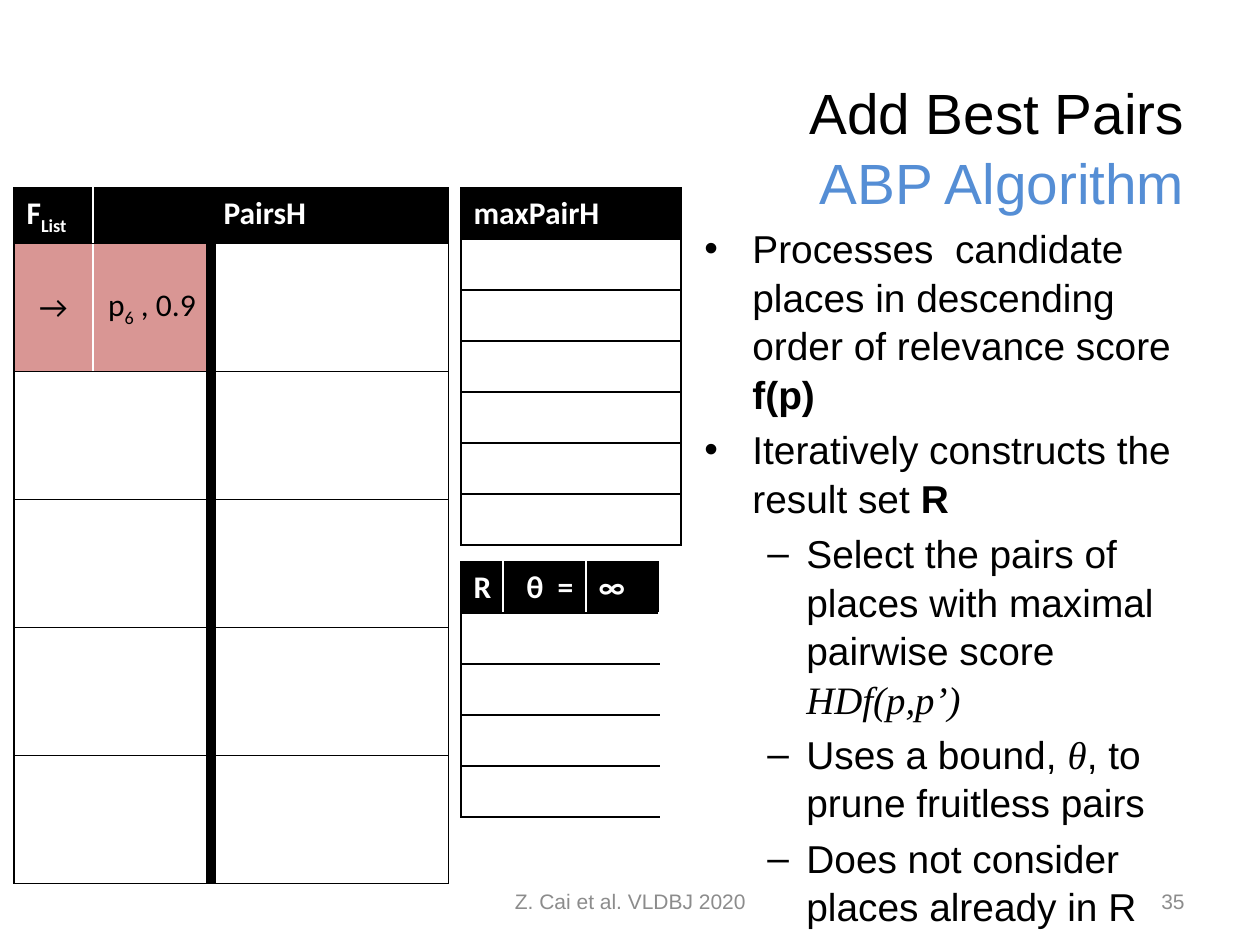
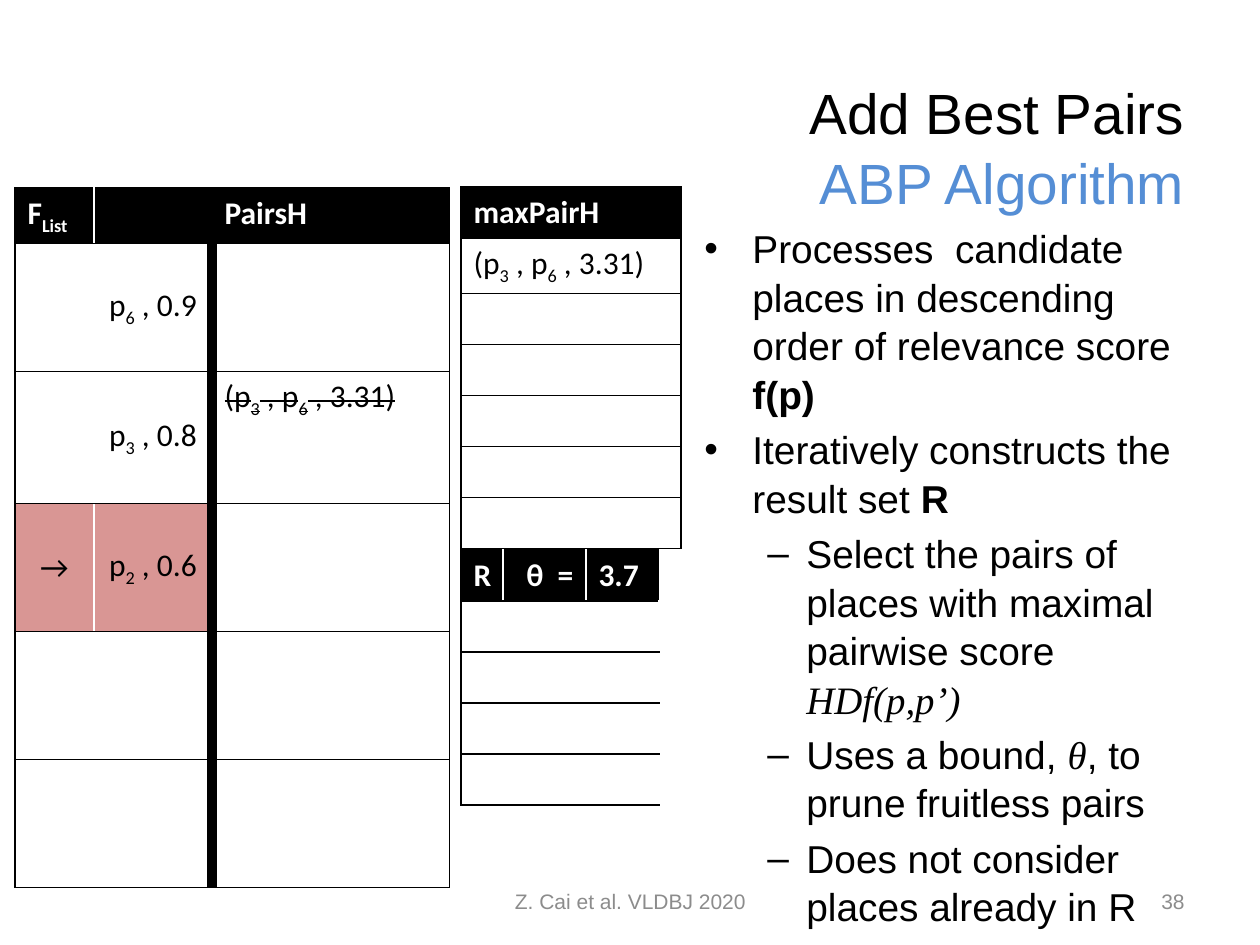
"""Build two slides that trace the Add Best Pairs algorithm through its tables."""
from lxml import etree
from pptx import Presentation
from pptx import util as u
from pptx.dml.color import RGBColor
from pptx.enum import text
from pptx.oxml.ns import qn

PX_PER_INCH = 126

THEME = {
    "ink": "000000", "paper": "FFFFFF", "accent": "558ED5",
    "muted": "8C8C8C", "current": "D99694",
    "sans": "Arial", "math": "Times New Roman", "table": "Calibri",
    "title_size": 32.4, "body_size": 22.2, "cell_size": 18, "footer_size": 12,
    "thin": 0.75, "thick": 6, "leading": 1.04, "paragraph_gap": 4,
}

TITLE_LINES = [("Add Best Pairs", "ink"), ("ABP Algorithm", "accent")]
CITATION = "Z. Cai et al. VLDBJ 2020"

BOLD = {"bold": True}
MATH = {"name": THEME["math"], "italic": True}
EXPLANATION = [
    (0, [("Processes  candidate places in descending order of relevance score ", {}),
         ("f(p)", BOLD)]),
    (0, [("Iteratively constructs the result set ", {}), ("R", BOLD)]),
    (1, [("Select the pairs of places with maximal pairwise score ", {}),
         ("HDf(p,p’)", MATH)]),
    (1, [("Uses a bound, ", {}), ("θ", MATH), (", to prune fruitless pairs", {})]),
    (1, [("Does not consider places already in R", {})]),
]
BULLETS = [("•", 48, -48), ("–", 102, -39)]

STEPS = [
    {"number": "35", "places": ["p_6_ , 0.9"], "current": 1,
     "discarded": {}, "best": [], "bound": "∞",
     "places_at": (14, 188), "places_rows": [54] + [128] * 5,
     "best_at": (461, 188), "best_rows": [51] * 7, "result_at": (461, 562)},
    {"number": "38", "places": ["p_6_ , 0.9", "p_3_ , 0.8", "p_2_ , 0.6"], "current": 3,
     "discarded": {2: "(p_3_ , p_6_ , 3.31)"}, "best": ["(p_3_ , p_6_ , 3.31)"],
     "bound": "3.7",
     "places_at": (15, 188), "places_rows": [54, 128, 132, 128, 128, 128],
     "best_at": (461, 187), "best_rows": [51, 55] + [51] * 5, "result_at": (461, 550)},
]

PLACES_COLUMNS = [79, 118, 238]
BEST_COLUMNS = [220]
RESULT_COLUMNS = [42, 83, 73]
RESULT_ROWS = [51] * 5
TITLE_BOX = (273, 67, 924, 157)
BODY_BOX = (692, 217, 533, 663)
CITATION_BOX = (431, 876, 399, 50)
NUMBER_BOX = (903, 876, 294, 50)


def px(length):
    return u.Emu(round(length * 914400 / PX_PER_INCH))


def colour(key):
    return RGBColor.from_string(THEME[key])


def assign(target, values):
    for key, value in values.items():
        setattr(target, key, value)


def write(paragraph, words, size, ink="ink", **style):
    run = paragraph.add_run()
    run.text = words
    assign(run.font, {"name": THEME["sans"], "size": u.Pt(THEME[size]), **style})
    run.font.color.rgb = colour(ink)
    return run


def add_text_box(slide, box, anchor):
    frame = slide.shapes.add_textbox(*map(px, box)).text_frame
    assign(frame, {"word_wrap": True, "vertical_anchor": anchor})
    return frame


def add_title(slide):
    title = slide.shapes.title
    assign(title, dict(zip(("left", "top", "width", "height"), map(px, TITLE_BOX))))
    assign(title.text_frame, {"word_wrap": True, "auto_size": text.MSO_AUTO_SIZE.NONE,
                              "vertical_anchor": text.MSO_ANCHOR.MIDDLE})
    heading = title.text_frame.paragraphs[0]
    assign(heading, {"alignment": text.PP_ALIGN.RIGHT, "line_spacing": THEME["leading"]})
    for index, (words, ink) in enumerate(TITLE_LINES):
        if index:
            heading.add_line_break()
            etree.SubElement(heading._p[-1], qn("a:rPr"),
                             sz=str(round(THEME["title_size"] * 100)))
        write(heading, words, "title_size", ink)


def add_explanation(slide):
    frame = add_text_box(slide, BODY_BOX, text.MSO_ANCHOR.TOP)
    for index, (level, parts) in enumerate(EXPLANATION):
        point = frame.add_paragraph() if index else frame.paragraphs[0]
        mark, margin, indent = BULLETS[level]
        properties = point._p.get_or_add_pPr()
        properties.set("marL", str(px(margin)))
        properties.set("indent", str(px(indent)))
        etree.SubElement(properties, qn("a:buFont"), typeface=THEME["sans"])
        etree.SubElement(properties, qn("a:buChar"), char=mark)
        assign(point, {"level": level, "line_spacing": THEME["leading"],
                       "space_before": u.Pt(THEME["paragraph_gap"] if index else 0)})
        for words, style in parts:
            write(point, words, "body_size", **style)


def add_footer(slide, box, words, alignment):
    line = add_text_box(slide, box, text.MSO_ANCHOR.MIDDLE).paragraphs[0]
    line.alignment = alignment
    write(line, words, "footer_size", "muted")


def border(cell, side, weight):
    properties = cell._tc.get_or_add_tcPr()
    edge = etree.SubElement(properties, qn(f"a:ln{side}"), w=str(u.Pt(THEME[weight])))
    fill = etree.SubElement(edge, qn("a:solidFill"))
    etree.SubElement(fill, qn("a:srgbClr"), val=THEME["ink"])


def fill_cell(cell, words, ink="ink", bold=False, struck=False, alignment=None, middle=False):
    paragraph = cell.text_frame.paragraphs[0]
    paragraph.alignment = alignment
    if middle:
        cell.vertical_anchor = text.MSO_ANCHOR.MIDDLE
    for index, part in enumerate(words.split("_")):
        if part:
            run = write(paragraph, part, "cell_size", ink, name=THEME["table"], bold=bold)
            if index % 2:
                run.font._element.set("baseline", "-25000")
            if struck:
                run.font._element.set("strike", "sngStrike")


def add_grid(slide, at, columns, rows, headings, open_after=(), thick_after=None, current=None):
    size = sum(columns), sum(rows)
    grid = slide.shapes.add_table(len(rows), len(columns), *map(px, at + size)).table
    grid.horz_banding = False
    for column, width in zip(grid.columns, columns):
        column.width = px(width)
    for row, height in zip(grid.rows, rows):
        row.height = px(height)
    for r in range(len(rows)):
        for c in range(len(columns)):
            cell = grid.cell(r, c)
            for side, neighbour in (("L", c - 1), ("R", c)):
                if neighbour == thick_after and r:
                    border(cell, side, "thick")
                elif neighbour not in open_after:
                    border(cell, side, "thin")
            border(cell, "T", "thin")
            border(cell, "B", "thin")
            marked = r == current and c <= thick_after
            cell.fill.solid()
            cell.fill.fore_color.rgb = colour(
                "ink" if r == 0 else "current" if marked else "paper")
    for c, (words, alignment) in enumerate(headings):
        fill_cell(grid.cell(0, c), words, "paper", bold=True, alignment=alignment)
    return grid


def add_result(slide, step):
    headings = [("R", None), ("θ  =", text.PP_ALIGN.RIGHT), (step["bound"], None)]
    result = add_grid(slide, step["result_at"], RESULT_COLUMNS, RESULT_ROWS, headings,
                      open_after=(0, 1))
    for r in range(1, len(RESULT_ROWS)):
        result.cell(r, 0).merge(result.cell(r, len(RESULT_COLUMNS) - 1))


def add_places(slide, step):
    headings = [("F_List_", None), ("", None), ("PairsH", None)]
    places = add_grid(slide, step["places_at"], PLACES_COLUMNS, step["places_rows"], headings,
                      open_after=(0,), thick_after=1, current=step["current"])
    centred = {"alignment": text.PP_ALIGN.CENTER, "middle": True}
    fill_cell(places.cell(step["current"], 0), "→", **centred)
    for r, place in enumerate(step["places"], 1):
        fill_cell(places.cell(r, 1), place, **centred)
    for r, pair in step["discarded"].items():
        fill_cell(places.cell(r, 2), pair, struck=True)


def add_best_pairs(slide, step):
    best = add_grid(slide, step["best_at"], BEST_COLUMNS, step["best_rows"],
                    [("maxPairH", None)])
    for r, pair in enumerate(step["best"], 1):
        fill_cell(best.cell(r, 0), pair)


def main():
    deck = Presentation()
    assign(deck, {"slide_width": u.Inches(10), "slide_height": u.Inches(7.5)})
    for step in STEPS:
        slide = deck.slides.add_slide(deck.slide_layouts[5])
        add_title(slide)
        add_footer(slide, NUMBER_BOX, step["number"], text.PP_ALIGN.RIGHT)
        add_result(slide, step)
        add_places(slide, step)
        add_best_pairs(slide, step)
        add_explanation(slide)
        add_footer(slide, CITATION_BOX, CITATION, text.PP_ALIGN.CENTER)
    deck.save("out.pptx")


if __name__ == "__main__":
    main()
